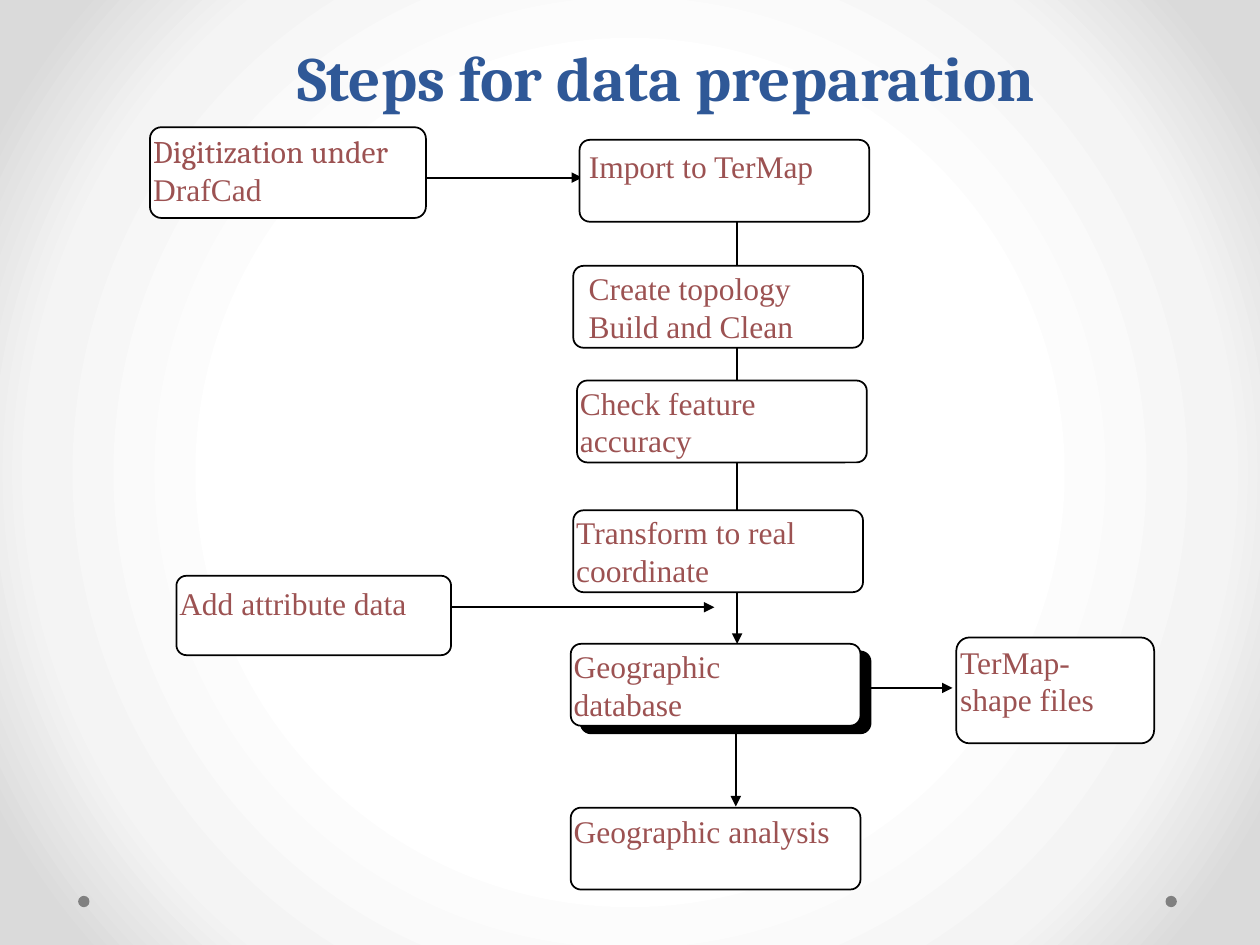
from lxml import etree
from pptx import Presentation
from pptx.dml.color import RGBColor as RGB
from pptx.enum.shapes import MSO_CONNECTOR as LINE, MSO_SHAPE as SHAPE
from pptx.enum.text import MSO_ANCHOR as ANCHOR, PP_ALIGN as ALIGN
from pptx.oxml import parse_xml
from pptx.oxml.ns import nsdecls, qn
from pptx.util import Inches, Pt

COLORS = {"title": "2F5897", "text": "9C5252", "line": "000000",
          "box": "FFFFFF", "dot": "808080"}
STOPS = [(50, "FFFFFF"), (76, "F4F4F4"), (92, "DADADA")]
SERIF, TIMES = "Cambria", "Times New Roman"


def color(name):
    return RGB.from_string(COLORS[name])


def draw(kind, left, top, width, height, fill):
    shape = slide.shapes.add_shape(
        kind, Inches(left), Inches(top), Inches(width), Inches(height))
    shape.shadow.inherit = False
    shape.fill.solid()
    shape.fill.fore_color.rgb = color(fill)
    if kind == SHAPE.OVAL:
        shape.line.fill.background()
    else:
        shape.adjustments[0] = 0.125
        shape.line.color.rgb = color("line")
        shape.line.width = Pt(1)
    return shape


deck = Presentation()
deck.slide_width, deck.slide_height = Inches(10), Inches(7.5)
slide = deck.slides.add_slide(deck.slide_layouts[5])

# Background: round gradient, white in the middle
stops = "".join(f'<a:gs pos="{pos * 1000}"><a:srgbClr val="{tone}"/></a:gs>'
                for pos, tone in STOPS)
slide.element.cSld.insert(0, parse_xml(
    f'<p:bg {nsdecls("p", "a")}><p:bgPr><a:gradFill rotWithShape="1">'
    f'<a:gsLst>{stops}</a:gsLst><a:path path="circle">'
    '<a:fillToRect l="50000" t="50000" r="50000" b="50000"/></a:path>'
    '</a:gradFill><a:effectLst/></p:bgPr></p:bg>'))
for left in (0.62, 9.25):
    draw(SHAPE.OVAL, left, 7.11, 0.09, 0.09, "dot")

# Title
title = slide.shapes.title
title.left, title.top = Inches(2.19), Inches(0.05)
title.width, title.height = Inches(6.19), Inches(0.85)
frame = title.text_frame
frame.text = "Steps for data preparation"
frame.word_wrap = False
frame.vertical_anchor = ANCHOR.TOP
para = frame.paragraphs[0]
para.alignment = ALIGN.CENTER
para.line_spacing = Pt(58)
font = para.runs[0].font
font.name, font.size, font.bold = SERIF, Pt(36), True
font.color.rgb = color("title")

# Arrows, behind the boxes: x and y of start, x and y of tip
ARROWS = [
    (3.38, 1.41, 4.62, 1.41),
    (5.85, 1.76, 5.85, 5.11),
    (3.58, 4.82, 5.67, 4.82),
    (6.9, 5.46, 7.56, 5.46),
    (5.84, 5.77, 5.84, 6.4),
]
for ends in ARROWS:
    arrow = slide.shapes.add_connector(LINE.STRAIGHT, *map(Inches, ends))
    arrow.line.color.rgb = color("line")
    arrow.line.width = Pt(1)
    etree.SubElement(arrow.line._get_or_add_ln(), qn("a:tailEnd"),
                     type="triangle", w="med", len="med")
    etree.SubElement(arrow._element.spPr, qn("a:effectLst"))

# Boxes: left, top, width, height, left and top inset, lines of text
WIDE, TALL = 2.3, 0.65
BOXES = [
    (1.19, 1.01, 2.19, 0.72, 0, 0.01, ["Digitization under", "DrafCad"]),
    (4.6, 1.11, WIDE, TALL, 0.05, 0.03, ["Import to TerMap"]),
    (4.55, 2.11, WIDE, TALL, 0.1, 0, ["Create topology", "Build and Clean"]),
    (4.58, 3.02, WIDE, TALL, 0, 0, ["Check feature", "accuracy"]),
    (4.55, 4.05, WIDE, TALL, 0, 0, ["Transform to real", "coordinate"]),
    (1.4, 4.57, 2.18, 0.63, 0, 0.04, ["Add attribute data"]),
    (4.53, 5.11, WIDE, TALL, 0, 0, ["Geographic", "database"]),
    (7.59, 5.06, 1.57, 0.84, 0, 0.01, ["TerMap-", "shape files"]),
    (4.53, 6.41, WIDE, TALL, 0, 0.01, ["Geographic analysis"]),
]
# Black slab under the database box
draw(SHAPE.ROUNDED_RECTANGLE, 4.61, 5.17, WIDE, TALL, "line")
for left, top, width, height, inset, drop, lines in BOXES:
    box = draw(SHAPE.ROUNDED_RECTANGLE, left, top, width, height, "box")
    frame = box.text_frame
    frame.text = "\n".join(lines)
    frame.word_wrap = True
    frame.vertical_anchor = ANCHOR.TOP
    frame.margin_left, frame.margin_top = Inches(inset), Inches(drop)
    frame.margin_right = frame.margin_bottom = 0
    for para in frame.paragraphs:
        para.alignment = ALIGN.LEFT
        font = para.runs[0].font
        font.name = SERIF if para.text.startswith("Digit") else TIMES
        font.size = Pt(18)
        font.color.rgb = color("text")

deck.save("out.pptx")
